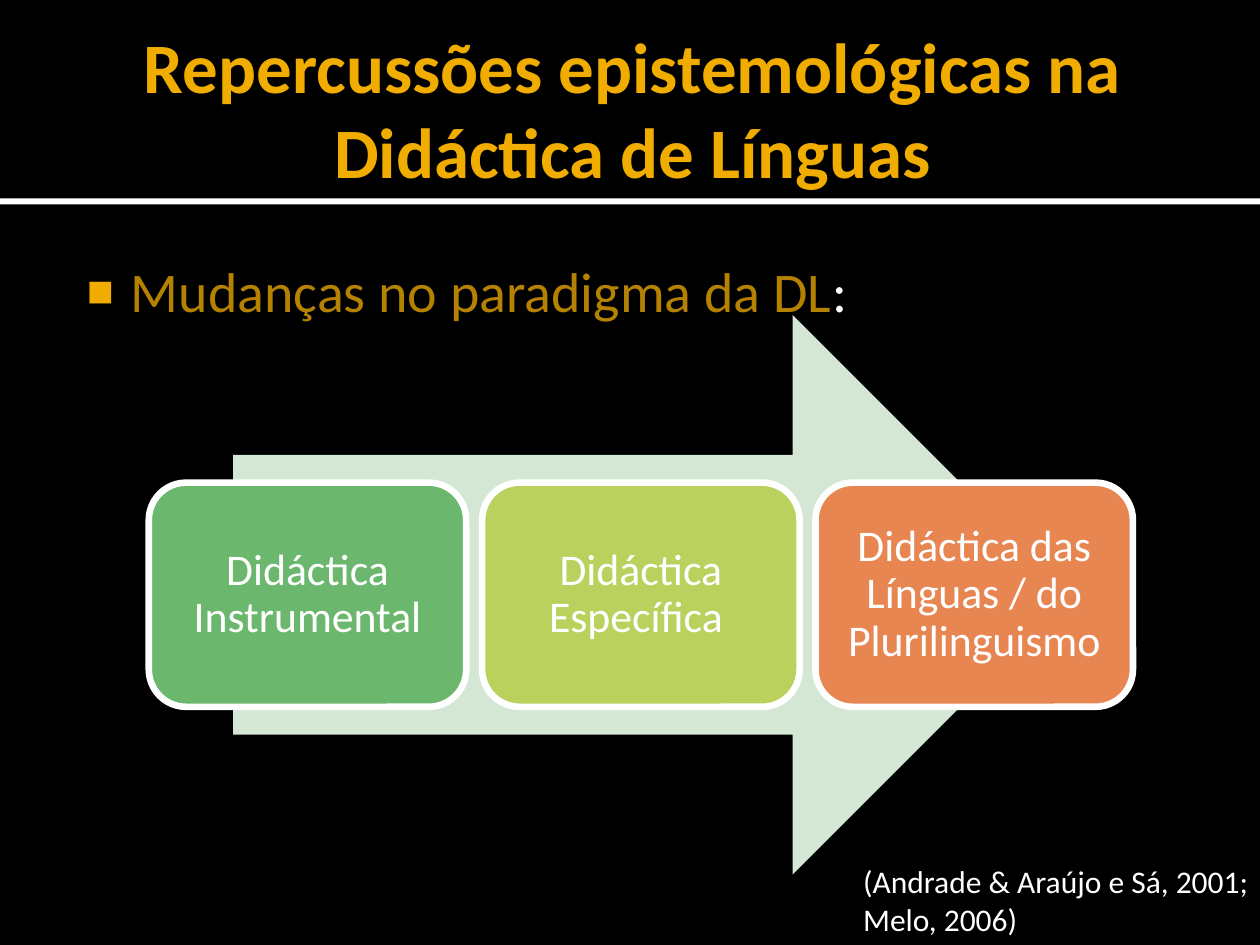
from lxml import etree
from pptx import Presentation
from pptx import util as u
from pptx.dml.color import RGBColor
from pptx.enum import shapes, text
from pptx.oxml.ns import qn

Cm, Pt = u.Cm, u.Pt
SHAPE = shapes.MSO_SHAPE
MID = text.MSO_ANCHOR.MIDDLE
CENTER = text.PP_ALIGN.CENTER


def color(code):
    return RGBColor.from_string(code)


def write(par, words, size, code, bold=False):
    run = par.add_run()
    run.text = words
    look = {"name": "Calibri", "size": Pt(size), "bold": bold}
    for key, val in look.items():
        setattr(run.font, key, val)
    run.font.color.rgb = color(code)


prs = Presentation()
prs.slide_width, prs.slide_height = Cm(25.4), Cm(19.05)
slide = prs.slides.add_slide(prs.slide_layouts[1])
slide.background.fill.solid()
slide.background.fill.fore_color.rgb = color("000000")
tree = slide.shapes

# Header band and rule, behind the placeholders
bands = [(0, 4, "000000"), (3.99, 0.13, "FFFFFF")]
for top, high, code in bands:
    band = tree.add_shape(SHAPE.RECTANGLE, 0, Cm(top), prs.slide_width, Cm(high))
    band.shadow.inherit = False
    band.fill.solid()
    band.fill.fore_color.rgb = color(code)
    band.line.fill.background()
    tree.element.insert(2, band.element)

# Title and body frames
title, body = tree.title, tree.placeholders[1]
frames = [
    (title, (1.27, 0.43, 22.86, 3.48), (0.25, 0.13, 0.13, 0.13), MID),
    (body, (1.27, 4.93, 22.86, 12.85), (0.15, 0.25, 0.25, 0.13), text.MSO_ANCHOR.TOP),
]
for hold, place, pads, anchor in frames:
    for key, val in zip(("left", "top", "width", "height"), place):
        setattr(hold, key, Cm(val))
    frame = hold.text_frame
    for side, val in zip(("left", "top", "right", "bottom"), pads):
        setattr(frame, "margin_" + side, Cm(val))
    frame.vertical_anchor = anchor
    frame.auto_size = text.MSO_AUTO_SIZE.NONE

# Title
par = title.text_frame.paragraphs[0]
par.alignment = CENTER
write(par, "Repercussões epistemológicas na Didáctica de Línguas", 40.5, "F0AD00", True)

# Bulleted line
par = body.text_frame.paragraphs[0]
par.space_before = Pt(0)
write(par, "Mudanças no paradigma da DL", 32, "B48200")
write(par, ":", 32, "FFFFFF")
props = par._p.get_or_add_pPr()
props.set("marL", str(Cm(1.22)))
props.set("indent", str(Cm(-0.89)))
tint = etree.SubElement(props, qn("a:buClr"))
etree.SubElement(tint, qn("a:srgbClr"), val="F0AD00")
etree.SubElement(props, qn("a:buSzPct"), val="80000")
etree.SubElement(props, qn("a:buChar"), char="■")

# Arrow behind the stages
arrow = tree.add_shape(SHAPE.RIGHT_ARROW, Cm(4.7), Cm(6.35), Cm(16.92), Cm(11.28))
arrow.shadow.inherit = False
arrow.fill.solid()
arrow.fill.fore_color.rgb = color("D4E6D4")
arrow.line.fill.background()

# Three stages
stages = [
    ("Didáctica Instrumental", "6BB76D"),
    ("Didáctica Específica ", "BBD15D"),
    ("Didáctica das Línguas / do Plurilinguismo", "E88651"),
]
for num, (words, code) in enumerate(stages):
    box = tree.add_shape(SHAPE.ROUNDED_RECTANGLE, Cm(3 + 6.72 * num), Cm(9.73),
                         Cm(6.4), Cm(4.52))
    box.shadow.inherit = False
    box.fill.solid()
    box.fill.fore_color.rgb = color(code)
    box.line.color.rgb = color("FFFFFF")
    box.line.width = Pt(3.78)
    frame = box.text_frame
    frame.word_wrap = True
    frame.vertical_anchor = MID
    for side in ("left", "top", "right", "bottom"):
        setattr(frame, "margin_" + side, Cm(0.04))
    par = frame.paragraphs[0]
    par.alignment = CENTER
    par.line_spacing = 0.9
    write(par, words, 25, "FFFFFF")

# Citation
cite = tree.add_textbox(Cm(17.15), Cm(17.25), Cm(8.69), Cm(1.8))
cite.text_frame.word_wrap = True
write(cite.text_frame.paragraphs[0], "(Andrade & Araújo e Sá, 2001; Melo, 2006)", 18, "FFFFFF")

prs.save("out.pptx")
